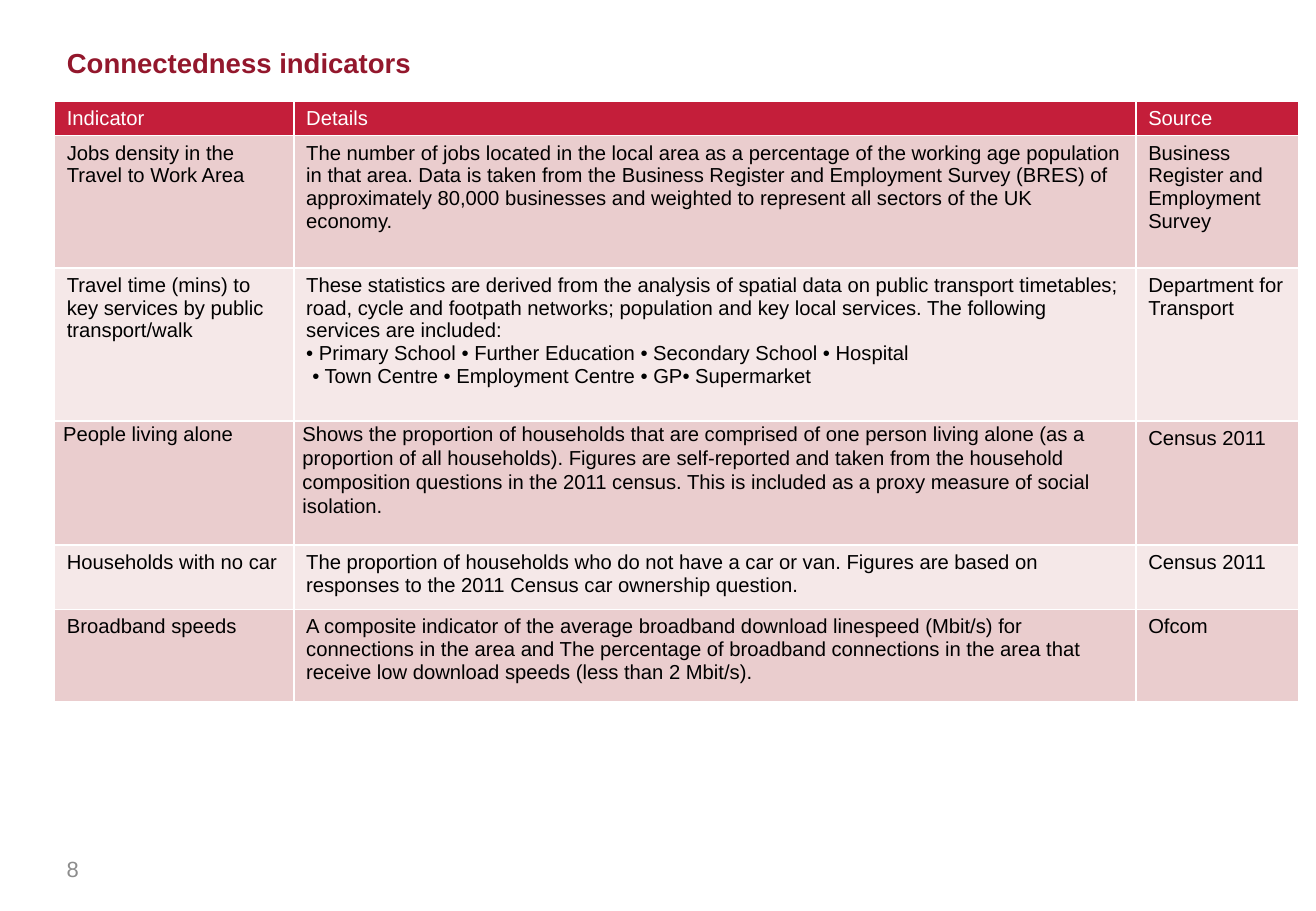
import pptx
import pptx.dml.color
import pptx.enum.text
import pptx.util

Inches = pptx.util.Inches
Pt = pptx.util.Pt

FONT = "Arial"
COLOURS = {
    "title": "93172C",
    "header": "C41E3A",
    "header_text": "FFFFFF",
    "odd_row": "EACDCE",
    "even_row": "F5E8E8",
    "body_text": "000000",
    "page_number": "8C8C8C",
}

COLUMN_WIDTHS = [1.97, 6.93, 1.34]
ROW_HEIGHTS = [0.28, 1.09, 1.26, 1.02, 0.53, 0.76]
TIGHT_CELLS = {(3, 0), (3, 1)}
INDENTED_LINE = "• Town Centre • Employment Centre • GP• Supermarket"

INDICATORS = [
    ("Indicator", "Details", "Source"),
    (
        "Jobs density in the Travel to Work Area",
        "The number of jobs located in the local area as a percentage of the "
        "working age population in that area. Data is taken from the Business "
        "Register and Employment Survey (BRES) of approximately 80,000 "
        "businesses and weighted to represent all sectors of the UK economy.",
        "Business Register and Employment Survey",
    ),
    (
        "Travel time (mins) to key services by public transport/walk",
        "These statistics are derived from the analysis of spatial data on "
        "public transport timetables; road, cycle and footpath networks; "
        "population and key local services. The following services are included:\n"
        "• Primary School • Further Education • Secondary School • Hospital\n"
        + INDENTED_LINE,
        "Department for Transport",
    ),
    (
        "People living alone",
        "Shows the proportion of households that are comprised of one person "
        "living alone (as a proportion of all households). Figures are "
        "self-reported and taken from the household composition questions in "
        "the 2011 census. This is included as a proxy measure of social isolation.",
        "Census 2011",
    ),
    (
        "Households with no car",
        "The proportion of households who do not have a car or van. Figures are "
        "based on responses to the 2011 Census car ownership question.",
        "Census 2011",
    ),
    (
        "Broadband speeds",
        "A composite indicator of the average broadband download linespeed "
        "(Mbit/s) for connections in the area and The percentage of broadband "
        "connections in the area that receive low download speeds (less than "
        "2 Mbit/s).",
        "Ofcom",
    ),
]


def colour(name):
    return pptx.dml.color.RGBColor.from_string(COLOURS[name])


def style_paragraph(paragraph, size, colour_name, bold=False):
    paragraph.alignment = pptx.enum.text.PP_ALIGN.LEFT
    paragraph.font.name = FONT
    paragraph.font.size = Pt(size)
    paragraph.font.bold = bold
    paragraph.font.color.rgb = colour(colour_name)


def place_title(slide, left, top, width, height):
    title = slide.shapes.title
    title.left, title.top = Inches(left), Inches(top)
    title.width, title.height = Inches(width), Inches(height)
    frame = title.text_frame
    frame.text = "Connectedness indicators"
    frame.auto_size = pptx.enum.text.MSO_AUTO_SIZE.NONE
    frame.vertical_anchor = pptx.enum.text.MSO_ANCHOR.TOP
    frame.margin_top = frame.margin_bottom = 0
    style_paragraph(frame.paragraphs[0], 16.3, "title", bold=True)


def fill_cell(cell, text, fill, text_colour, tight):
    """Write one table cell; a tight cell has small margins and looser lines."""
    cell.fill.solid()
    cell.fill.fore_color.rgb = colour(fill)
    cell.margin_left = cell.margin_right = Inches(0.07 if tight else 0.1)
    cell.margin_top = cell.margin_bottom = Inches(0 if tight else 0.05)
    cell.text = text
    for paragraph in cell.text_frame.paragraphs:
        if paragraph.text == INDENTED_LINE:
            paragraph._p.get_or_add_pPr().set("marL", str(Inches(0.05)))
        if tight:
            paragraph.line_spacing = 1.07
        style_paragraph(paragraph, 12, text_colour)


def add_indicator_table(slide, left, top):
    table = slide.shapes.add_table(
        len(ROW_HEIGHTS), len(COLUMN_WIDTHS), Inches(left), Inches(top),
        Inches(sum(COLUMN_WIDTHS)), Inches(sum(ROW_HEIGHTS)),
    ).table
    for column, width in zip(table.columns, COLUMN_WIDTHS):
        column.width = Inches(width)
    for row, height in zip(table.rows, ROW_HEIGHTS):
        row.height = Inches(height)
    for r, entries in enumerate(INDICATORS):
        if r == 0:
            fill, text_colour = "header", "header_text"
        else:
            fill, text_colour = "odd_row" if r % 2 else "even_row", "body_text"
        for c, text in enumerate(entries):
            fill_cell(table.cell(r, c), text, fill, text_colour, (r, c) in TIGHT_CELLS)


def add_page_number(slide, left, top, width, height):
    page_number = slide.shapes.add_textbox(
        Inches(left), Inches(top), Inches(width), Inches(height))
    frame = page_number.text_frame
    frame.word_wrap = True
    frame.vertical_anchor = pptx.enum.text.MSO_ANCHOR.MIDDLE
    frame.text = "8"
    style_paragraph(frame.paragraphs[0], 13, "page_number")


def main():
    presentation = pptx.Presentation()
    presentation.slide_width = Inches(10.83)
    presentation.slide_height = Inches(7.5)
    slide = presentation.slides.add_slide(presentation.slide_layouts[5])
    margin = 0.45
    place_title(slide, margin, 0.38, 9.92, 1.24)
    add_indicator_table(slide, margin, 0.83)
    add_page_number(slide, margin, 6.95, 2.53, 0.4)
    presentation.save("out.pptx")


if __name__ == "__main__":
    main()
